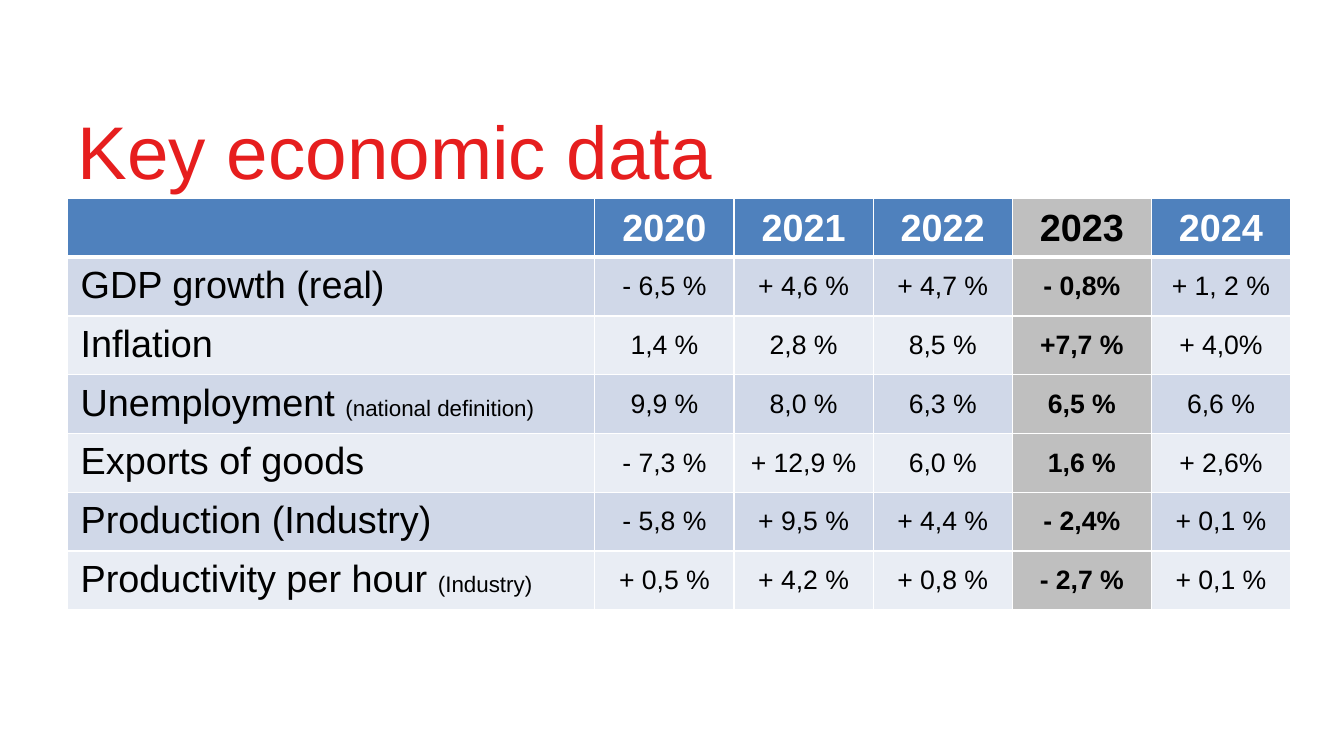
import pptx
import pptx.util
import pptx.dml.color
import pptx.enum.text
import pptx.oxml
import pptx.oxml.ns

Inches = pptx.util.Inches
FONT = "Arial"
WHITE, BLACK, RED = "FFFFFF", "000000", "E61E1E"
HEADER_BLUE, HIGHLIGHT_GREY = "4F81BD", "BFBFBF"
BANDS = ("D0D8E8", "E9EDF4")
YEARS = ("2020", "2021", "2022", "2023", "2024")
HIGHLIGHT_YEAR = "2023"
INDICATORS = (
    ("GDP growth (real)", "", ("- 6,5 %", "+ 4,6 %", "+ 4,7 %", "- 0,8%", "+ 1, 2 %")),
    ("Inflation", "", ("1,4 %", "2,8 %", "8,5 %", "+7,7 %", "+ 4,0%")),
    ("Unemployment ", "(national definition)", ("9,9 %", "8,0 %", "6,3 %", "6,5 %", "6,6 %")),
    ("Exports of goods", "", ("- 7,3 %", "+ 12,9 %", "6,0 %", "1,6 %", "+ 2,6%")),
    ("Production (Industry)", "", ("- 5,8 %", "+ 9,5 %", "+ 4,4 %", "- 2,4%", "+ 0,1 %")),
    ("Productivity per hour ", "(Industry)", ("+ 0,5 %", "+ 4,2 %", "+ 0,8 %", "- 2,7 %", "+ 0,1 %")),
)


def color(value):
    """Return the colour for a hex string."""
    return pptx.dml.color.RGBColor.from_string(value)


def add_span(para, text, size, fill, bold=False):
    """Add one formatted run to a paragraph."""
    span = para.add_run()
    span.text = text
    span.font.name = FONT
    span.font.size = pptx.util.Pt(size)
    span.font.bold = bold
    span.font.color.rgb = color(fill)


def set_borders(cell, top, bottom):
    """Give a cell white borders, with top and bottom widths in points."""
    properties = cell._tc.get_or_add_tcPr()
    widths = {"lnL": 1, "lnR": 1, "lnT": top, "lnB": bottom}
    for position, (side, width) in enumerate(widths.items()):
        properties.insert(position, pptx.oxml.parse_xml(
            f'<a:{side} {pptx.oxml.ns.nsdecls("a")} w="{pptx.util.Pt(width)}">'
            f'<a:solidFill><a:srgbClr val="{WHITE}"/></a:solidFill></a:{side}>'))


def style_cell(cell, fill, is_label, top, bottom):
    """Set the fill, margins, alignment and borders of a cell."""
    cell.fill.solid()
    cell.fill.fore_color.rgb = color(fill)
    cell.margin_left = cell.margin_right = Inches(0.13)
    cell.margin_top = cell.margin_bottom = Inches(0.07)
    if not is_label:
        cell.vertical_anchor = pptx.enum.text.MSO_ANCHOR.MIDDLE
        cell.text_frame.paragraphs[0].alignment = pptx.enum.text.PP_ALIGN.CENTER
    set_borders(cell, top, bottom)


def place_title(page, left, top, width, height):
    """Place the slide title in the given box."""
    title = page.shapes.title
    title.left, title.top = Inches(left), Inches(top)
    title.width, title.height = Inches(width), Inches(height)
    title.text_frame.vertical_anchor = pptx.enum.text.MSO_ANCHOR.MIDDLE
    para = title.text_frame.paragraphs[0]
    para.alignment = pptx.enum.text.PP_ALIGN.LEFT
    add_span(para, "Key economic data", 53.3, RED)


def place_table(page, left, top, width, height):
    """Place the table of indicators by year in the given box."""
    row_count, column_count = len(INDICATORS) + 1, len(YEARS) + 1
    table = page.shapes.add_table(row_count, column_count, Inches(left), Inches(top),
                                  Inches(width), Inches(height)).table
    year_width = 1.38
    table.columns[0].width = Inches(width - year_width * len(YEARS))
    for column in range(1, column_count):
        table.columns[column].width = Inches(year_width)
    for row in table.rows:
        row.height = Inches(height / row_count)

    style_cell(table.cell(0, 0), HEADER_BLUE, False, 1, 3)
    for column, year in enumerate(YEARS, 1):
        highlighted = year == HIGHLIGHT_YEAR
        cell = table.cell(0, column)
        style_cell(cell, HIGHLIGHT_GREY if highlighted else HEADER_BLUE, False, 1, 3)
        add_span(cell.text_frame.paragraphs[0], year, 27, BLACK if highlighted else WHITE, True)

    for row, (label, note, values) in enumerate(INDICATORS, 1):
        band = BANDS[(row - 1) % 2]
        top_line = 3 if row == 1 else 1
        cell = table.cell(row, 0)
        style_cell(cell, band, True, top_line, 1)
        add_span(cell.text_frame.paragraphs[0], label, 27, BLACK)
        if note:
            add_span(cell.text_frame.paragraphs[0], note, 16, BLACK)
        for column, (year, value) in enumerate(zip(YEARS, values), 1):
            highlighted = year == HIGHLIGHT_YEAR
            cell = table.cell(row, column)
            style_cell(cell, HIGHLIGHT_GREY if highlighted else band, False, top_line, 1)
            add_span(cell.text_frame.paragraphs[0], value, 19, BLACK, highlighted)


def main():
    """Build the deck and save it."""
    deck = pptx.Presentation()
    deck.slide_width, deck.slide_height = Inches(13.33), Inches(7.5)
    page = deck.slides.add_slide(deck.slide_layouts[5])
    place_title(page, 0.67, 0.77, 12, 1.43)
    place_table(page, 0.67, 1.97, 12.13, 4.08)
    deck.save("out.pptx")


if __name__ == "__main__":
    main()
